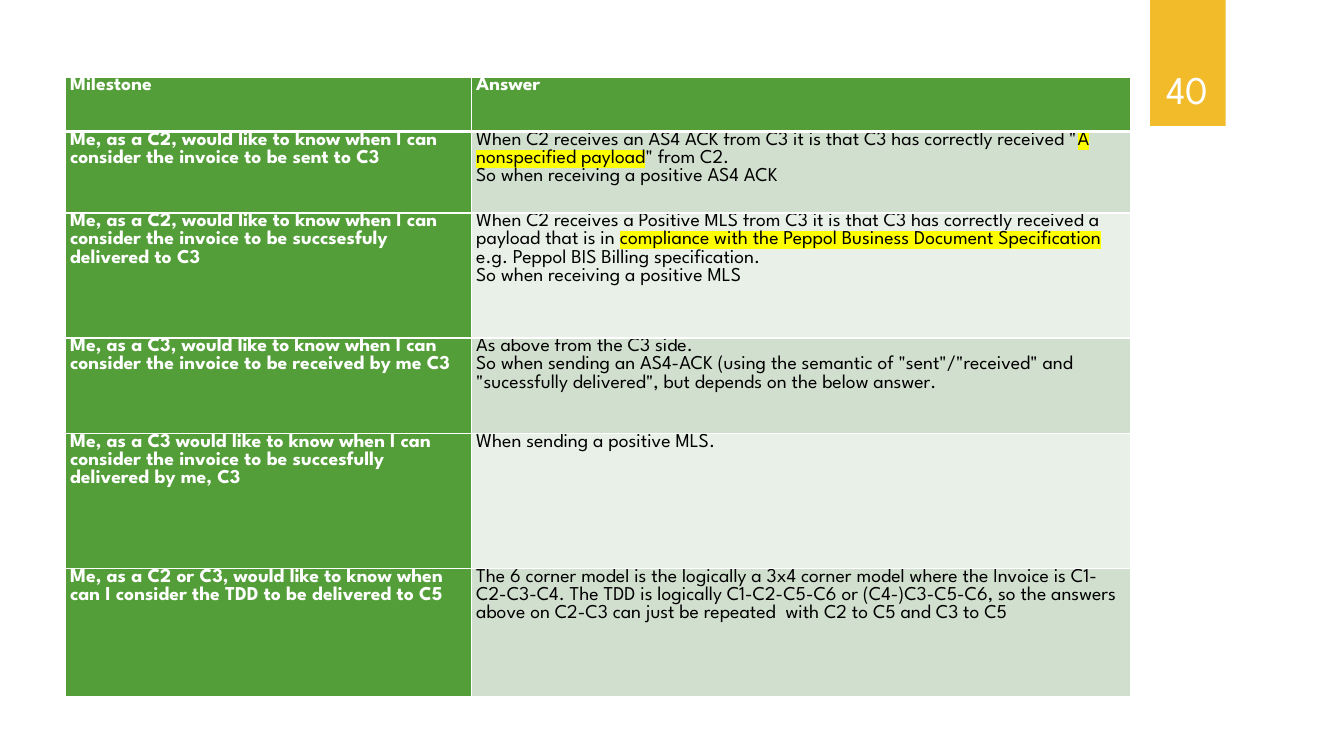
from lxml import etree
from pptx import Presentation
from pptx.dml.color import RGBColor
from pptx.enum.shapes import MSO_SHAPE
from pptx.enum.text import MSO_ANCHOR, PP_ALIGN
from pptx.oxml.ns import qn
from pptx.util import Pt

RECTANGLE = MSO_SHAPE.RECTANGLE
BOTTOM = MSO_ANCHOR.BOTTOM
CENTER = PP_ALIGN.CENTER

FONT = "League Spartan"
WHITE, BLACK, YELLOW = "FFFFFF", "000000", "FFFF00"
GREEN, GOLD = "549E39", "F1BB2A"
BANDS = ("D1DFCE", "E9F0E8")

COLUMN_WIDTHS = (290.16, 470.88)
ROW_HEIGHTS = (38.88, 58.32, 89.28, 68.4, 96.48, 91.44)

# Each answer is a list of paragraphs; a paragraph is a list of (text, highlighted) runs.
MILESTONES = [
    ("Me, as a C2, would like to know when I can consider the invoice to be sent to C3",
     [[('When C2 receives an AS4 ACK from C3 it is that C3 has correctly received "', False),
       ("A nonspecified payload", True),
       ('" from C2.', False)],
      [("So when receiving a positive AS4 ACK", False)]]),
    ("Me, as a C2, would like to know when I can consider the invoice to be succsesfuly "
     "delivered to C3",
     [[("When C2 receives a Positive MLS from C3 it is that C3 has correctly received a "
        "payload that is in ", False),
       ("compliance with the Peppol Business Document Specification", True),
       (" e.g. Peppol BIS Billing specification.", False)],
      [("So when receiving a positive MLS", False)]]),
    ("Me, as a C3, would like to know when I can consider the invoice to be received by me C3",
     [[("As above from the C3 side.", False)],
      [('So when sending an AS4-ACK (using the semantic of "sent"/"received" and '
        '"sucessfully delivered", but depends on the below answer.', False)]]),
    ("Me, as a C3 would like to know when I can consider the invoice to be succesfully "
     "delivered by me, C3",
     [[("When sending a positive MLS.", False)]]),
    ("Me, as a C2 or C3, would like to know when can I consider the TDD to be delivered to C5",
     [[("The 6 corner model is the logically a 3x4 corner model where the Invoice is "
        "C1-C2-C3-C4. The TDD is logically C1-C2-C5-C6 or (C4-)C3-C5-C6, so the answers "
        "above on C2-C3 can just be repeated  with C2 to C5 and C3 to C5", False)]]),
]


def rgb(value):
    return RGBColor.from_string(value)


def add_color(parent, value):
    etree.SubElement(parent, qn("a:srgbClr"), val=value)


def add_run(paragraph, text, size, color, bold=False, highlighted=False):
    run = paragraph.add_run()
    run.text = text
    run.font.size = Pt(size)
    run.font.bold = bold
    run.font.name = FONT
    run.font.color.rgb = rgb(color)
    if highlighted:
        marker = etree.Element(qn("a:highlight"))
        add_color(marker, YELLOW)
        run.font._element.find(qn("a:solidFill")).addnext(marker)


def add_borders(cell, top, bottom):
    """Draw white borders; must come before the cell's fill."""
    properties = cell._tc.get_or_add_tcPr()
    for side, width in (("L", 1), ("R", 1), ("T", top), ("B", bottom)):
        border = etree.SubElement(properties, qn(f"a:ln{side}"), w=str(Pt(width)))
        add_color(etree.SubElement(border, qn("a:solidFill")), WHITE)


def fill_cell(cell, paragraphs, fill, color, bold, top=1, bottom=1):
    add_borders(cell, top, bottom)
    cell.fill.solid()
    cell.fill.fore_color.rgb = rgb(fill)
    cell.margin_left = cell.margin_right = Pt(3.6)
    cell.margin_top = cell.margin_bottom = 0
    frame = cell.text_frame
    for index, runs in enumerate(paragraphs):
        paragraph = frame.add_paragraph() if index else frame.paragraphs[0]
        for text, highlighted in runs:
            add_run(paragraph, text, 14, color, bold, highlighted)


def add_milestone_table(slide):
    table = slide.shapes.add_table(
        len(ROW_HEIGHTS), len(COLUMN_WIDTHS), Pt(46.4), Pt(55),
        Pt(sum(COLUMN_WIDTHS)), Pt(sum(ROW_HEIGHTS))).table
    for column, width in zip(table.columns, COLUMN_WIDTHS):
        column.width = Pt(width)
    for row, height in zip(table.rows, ROW_HEIGHTS):
        row.height = Pt(height)

    for column, heading in enumerate(("Milestone", "Answer")):
        fill_cell(table.cell(0, column), [[(heading, False)]], GREEN, WHITE, True, bottom=3)
    for row, (milestone, answer) in enumerate(MILESTONES, start=1):
        top = 3 if row == 1 else 1
        fill_cell(table.cell(row, 0), [[(milestone, False)]], GREEN, WHITE, True, top)
        fill_cell(table.cell(row, 1), answer, BANDS[(row - 1) % 2], BLACK, False, top)


def add_page_tab(slide, number):
    tab = slide.shapes.add_shape(RECTANGLE, Pt(821.5), 0, Pt(54), Pt(90))
    tab.shadow.inherit = False
    tab.fill.solid()
    tab.fill.fore_color.rgb = rgb(GOLD)
    tab.line.fill.background()

    label = slide.shapes.add_textbox(Pt(815), Pt(23), Pt(66.5), Pt(60.5))
    frame = label.text_frame
    frame.word_wrap = True
    frame.vertical_anchor = BOTTOM
    frame.paragraphs[0].alignment = CENTER
    add_run(frame.paragraphs[0], number, 28, WHITE)


def main():
    presentation = Presentation()
    presentation.slide_width = Pt(960)
    presentation.slide_height = Pt(540)
    slide = presentation.slides.add_slide(presentation.slide_layouts[6])
    add_page_tab(slide, "40")
    add_milestone_table(slide)
    presentation.save("out.pptx")


if __name__ == "__main__":
    main()
